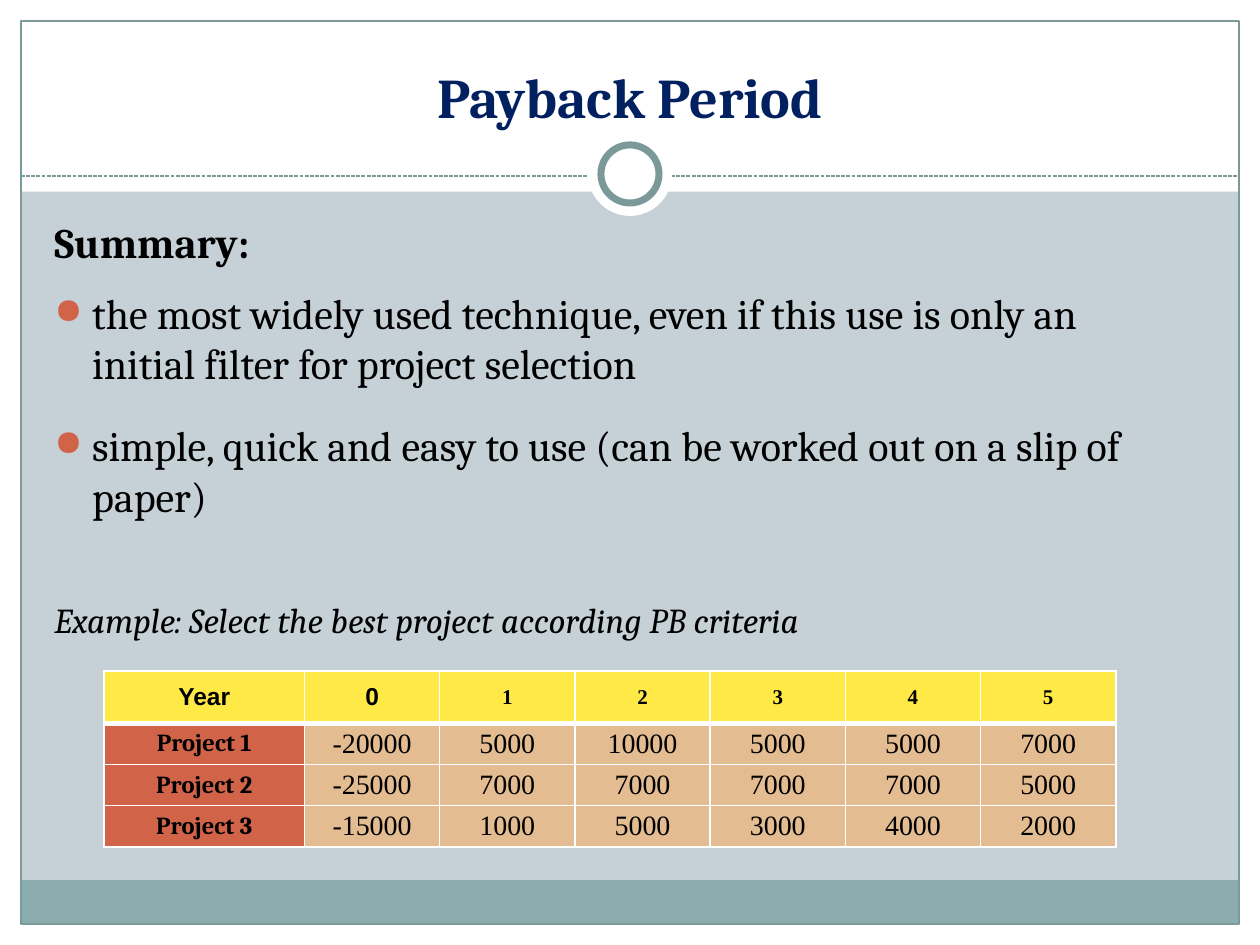
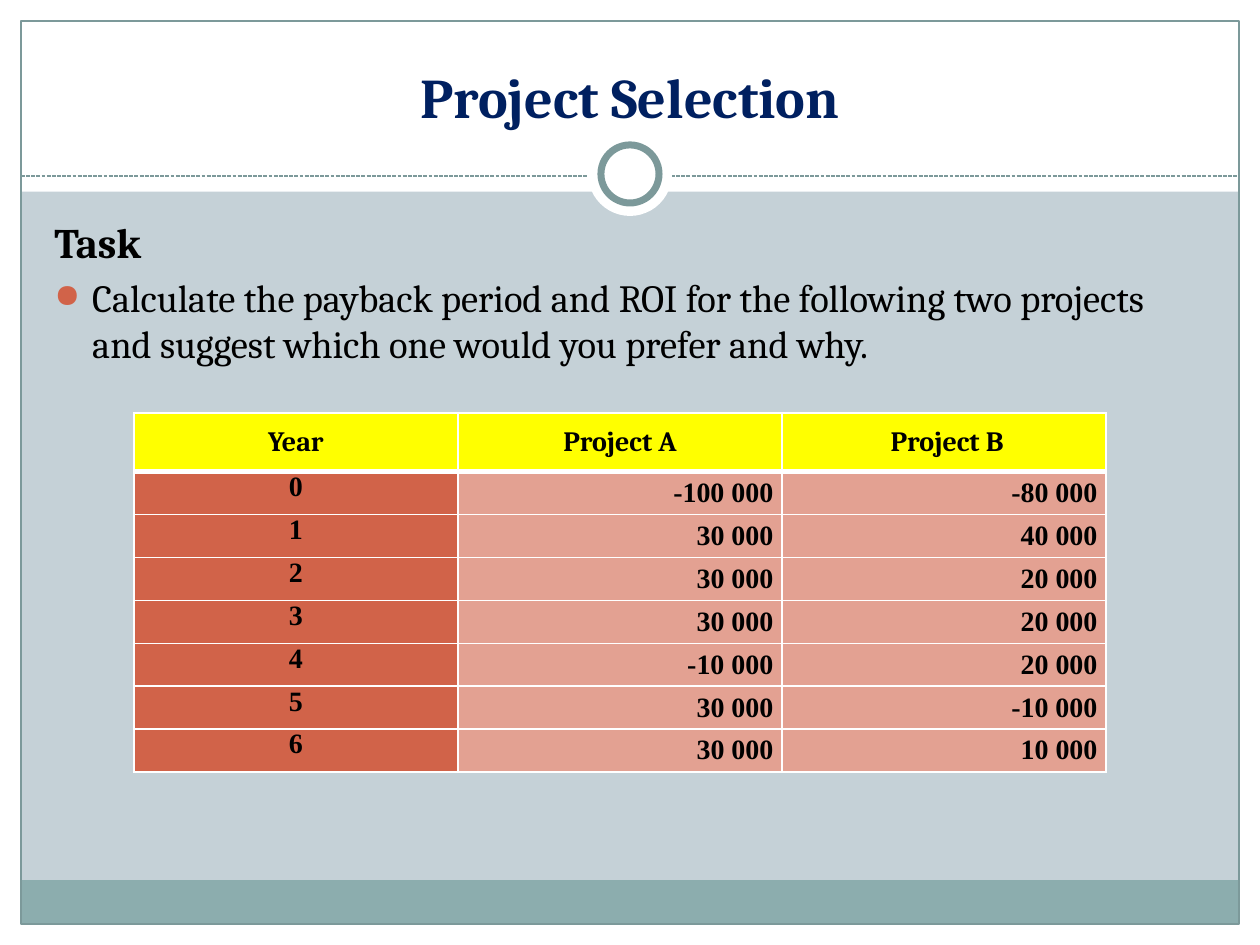
from lxml import etree
from pptx import Presentation
from pptx.dml.color import RGBColor
from pptx.enum.dml import MSO_LINE
from pptx.enum.shapes import MSO_CONNECTOR, MSO_SHAPE
from pptx.enum.text import MSO_ANCHOR, MSO_AUTO_SIZE, PP_ALIGN
from pptx.oxml.ns import qn
from pptx.util import Pt

RECT, OVAL = MSO_SHAPE.RECTANGLE, MSO_SHAPE.OVAL
TOP, MID, LOW = MSO_ANCHOR.TOP, MSO_ANCHOR.MIDDLE, MSO_ANCHOR.BOTTOM
MIDST, RIGHT = PP_ALIGN.CENTER, PP_ALIGN.RIGHT
DASH = MSO_LINE.SQUARE_DOT
STRAIGHT = MSO_CONNECTOR.STRAIGHT
NOFIT = MSO_AUTO_SIZE.NONE

WHITE, BLACK, NAVY = "FFFFFF", "000000", "002060"
GROUND, BAND, EDGE, RUST = "C5D1D7", "8CADAE", "7C999A", "D16349"
SERIF, TIMES, SANS = "Cambria", "Times New Roman", "Arial"
WIDE, HIGH, RIM = 720, 540, 12
HEAD = {"name": SERIF, "size": Pt(24), "bold": True}
PLAIN = {"name": SERIF, "size": Pt(24)}


def color(code):
    """Turn a hex string into a colour."""
    return RGBColor.from_string(code)


def assign(item, values):
    """Set each attribute of an item from a dict."""
    for key, value in values.items():
        setattr(item, key, value)


def write(para, text, look, ink=BLACK):
    """Add one formatted run to a paragraph."""
    run = para.add_run()
    run.text = text
    assign(run.font, look)
    run.font.color.rgb = color(ink)


def shape(slide, kind, box, fill=None, line=None, width=0.75):
    """Add a flat preset shape."""
    item = slide.shapes.add_shape(kind, *map(Pt, box))
    item.shadow.inherit = False
    if fill:
        item.fill.solid()
        item.fill.fore_color.rgb = color(fill)
    else:
        item.fill.background()
    if line:
        item.line.color.rgb = color(line)
        item.line.width = Pt(width)
    else:
        item.line.fill.background()
    return item


def rule(slide, left, right, y):
    """Add the dashed line under the title."""
    item = slide.shapes.add_connector(STRAIGHT, Pt(left), Pt(y), Pt(right), Pt(y))
    item.line.color.rgb = color(EDGE)
    assign(item.line, {"width": Pt(0.75), "dash_style": DASH})
    etree.SubElement(item._element.spPr, qn("a:effectLst"))
    return item


def ring(slide, x, y):
    """Add the ring and its white halo around a centre."""
    return [shape(slide, OVAL, (x - r, y - r, 2 * r, 2 * r), WHITE, line, 4)
            for r, line in ((24, None), (16.6, EDGE))]


def frame(slide):
    """Build the shared frame and move it to the layout of the slide."""
    layout = slide.slide_layout
    layout.background.fill.solid()
    layout.background.fill.fore_color.rgb = color(GROUND)
    inner = WIDE - 2 * RIM
    whites = ((0, HIGH - RIM, WIDE, RIM), (0, 0, WIDE, 109.5),
              (0, 0, RIM, HIGH), (WIDE - RIM, 0, RIM, HIGH))
    parts = [shape(slide, RECT, box, WHITE) for box in whites]
    parts += [
        shape(slide, RECT, (RIM, 503, inner, 25), BAND),
        shape(slide, RECT, (RIM, RIM, inner, HIGH - 2 * RIM), None, EDGE),
        rule(slide, RIM, WIDE - RIM, 100.6),
        *ring(slide, WIDE / 2, 99.4),
    ]
    for part in parts:
        layout.shapes._spTree.append(part._element)


def title(slide, text):
    """Place and fill the title."""
    item = slide.shapes.title
    assign(item, dict(zip(("left", "top", "width", "height"),
                          map(Pt, (24, 18, 672, 60)))))
    assign(item.text_frame, {"vertical_anchor": LOW, "auto_size": NOFIT,
                             "word_wrap": True})
    para = item.text_frame.paragraphs[0]
    para.alignment = MIDST
    write(para, text, {"name": SERIF, "size": Pt(32), "bold": True}, NAVY)


def bullet(para):
    """Give a paragraph a hanging round bullet."""
    props = para._p.get_or_add_pPr()
    props.set("marL", str(Pt(21.6)))
    props.set("indent", str(-Pt(21.6)))
    tint = etree.SubElement(props, qn("a:buClr"))
    etree.SubElement(tint, qn("a:srgbClr"), val=RUST)
    etree.SubElement(props, qn("a:buSzPct"), val="85000")
    etree.SubElement(props, qn("a:buChar"), char="●")


def body(slide, box, lines):
    """Add text lines of wording, font, dot, space before and after."""
    frame = slide.shapes.add_textbox(*map(Pt, box)).text_frame
    frame.word_wrap = True
    for i, (text, look, dot, before, after) in enumerate(lines):
        para = frame.add_paragraph() if i else frame.paragraphs[0]
        assign(para, {"space_before": Pt(before), "space_after": Pt(after)})
        if dot:
            bullet(para)
        write(para, text, look)


def border(cell, top, low):
    """Draw white borders, with given top and bottom widths."""
    props = cell._tc.get_or_add_tcPr()
    for side, width in zip("LRTB", (1, 1, top, low)):
        line = etree.SubElement(props, qn("a:ln" + side), w=str(Pt(width)))
        fill = etree.SubElement(line, qn("a:solidFill"))
        etree.SubElement(fill, qn("a:srgbClr"), val=WHITE)


def grid(slide, box, cols, head, rows, pad, style):
    """Add a table; style gives fill, font, alignment and anchor of a cell."""
    deep = (box[3] - head) / (len(rows) - 1)
    table = slide.shapes.add_table(len(rows), len(cols), *map(Pt, box)).table
    assign(table, {"first_row": False, "horz_banding": False})
    for col, width in zip(table.columns, cols):
        col.width = Pt(width)
    for r, row in enumerate(rows):
        table.rows[r].height = Pt(deep if r else head)
        for c, text in enumerate(row):
            cell = table.cell(r, c)
            fill, look, align, anchor = style(r, c)
            border(cell, 3 if r == 1 else 1, 1 if r else 3)
            cell.fill.solid()
            cell.fill.fore_color.rgb = color(fill)
            assign(cell, {"margin_left": Pt(pad), "margin_right": Pt(pad),
                          "margin_top": 0, "margin_bottom": 0,
                          "vertical_anchor": anchor})
            para = cell.text_frame.paragraphs[0]
            para.alignment = align
            write(para, text, look)


def cash(r, c):
    """Style a cell of the cash flow table."""
    if r == 0:
        name, size = (SANS, 14) if c < 2 else (TIMES, 12)
        fill = "FFE947"
    else:
        name, size = (TIMES, 16) if c else (SERIF, 14)
        fill = "E3BC92" if c else RUST
    look = {"name": name, "size": Pt(size), "bold": r == 0 or c == 0}
    return fill, look, MIDST, MID


def task(r, c):
    """Style a cell of the task table."""
    look = {"name": TIMES if r else SERIF, "size": Pt(16), "bold": True}
    if r == 0:
        return "FFFF00", look, MIDST, MID
    return ("E3A192", look, RIGHT, MID) if c else (RUST, look, MIDST, TOP)


def payback(slide):
    """Fill the payback slide."""
    title(slide, "Payback Period")
    body(slide, (24, 120, 659.5, 360), [
        ("Summary:", HEAD, False, 0, 0),
        ("the most widely used technique, even if this use is only an "
         "initial filter for project selection", PLAIN, True, 12, 6),
        ("simple, quick and easy to use (can be worked out on a slip of paper)",
         PLAIN, True, 12, 6),
        ("Example: Select the best project according PB criteria",
         {"name": SERIF, "size": Pt(20), "italic": True}, False, 38.5, 0),
    ])
    flows = ["Year 0 1 2 3 4 5".split()]
    for i, line in enumerate(("-20000 5000 10000 5000 5000 7000",
                              "-25000 7000 7000 7000 7000 5000",
                              "-15000 1000 5000 3000 4000 2000"), 1):
        flows.append([f"Project {i}", *line.split()])
    grid(slide, (59.5, 383.3, 578.3, 100.6), [114.5] + [77.3] * 6, 30,
         flows, 5.4, cash)


def choice(slide):
    """Fill the project selection slide."""
    title(slide, "Project Selection")
    body(slide, (24, 120, 653.8, 360), [
        ("Task", HEAD, False, 0, 0),
        ("Calculate the payback period and ROI for the following two projects "
         "and suggest which one would you prefer and why.",
         {"name": SERIF, "size": Pt(22)}, True, 4.4, 0),
    ])
    sums = (("-100 000", "-80 000"), ("30 000", "40 000"), ("30 000", "20 000"),
            ("30 000", "20 000"), ("-10 000", "20 000"), ("30 000", "-10 000"),
            ("30 000", "10 000"))
    rows = [("Year", "Project A", " Project B")]
    rows += [(str(i), *pair) for i, pair in enumerate(sums)]
    grid(slide, (76.5, 236, 555.6, 205.2), [185.2] * 3, 33.6, rows, 5, task)


def main():
    """Build and save the slides."""
    deck = Presentation()
    assign(deck, {"slide_width": Pt(WIDE), "slide_height": Pt(HIGH)})
    layout = deck.slide_layouts[5]
    first, second = (deck.slides.add_slide(layout) for _ in range(2))
    frame(first)
    payback(first)
    choice(second)
    deck.save("out.pptx")


if __name__ == "__main__":
    main()
